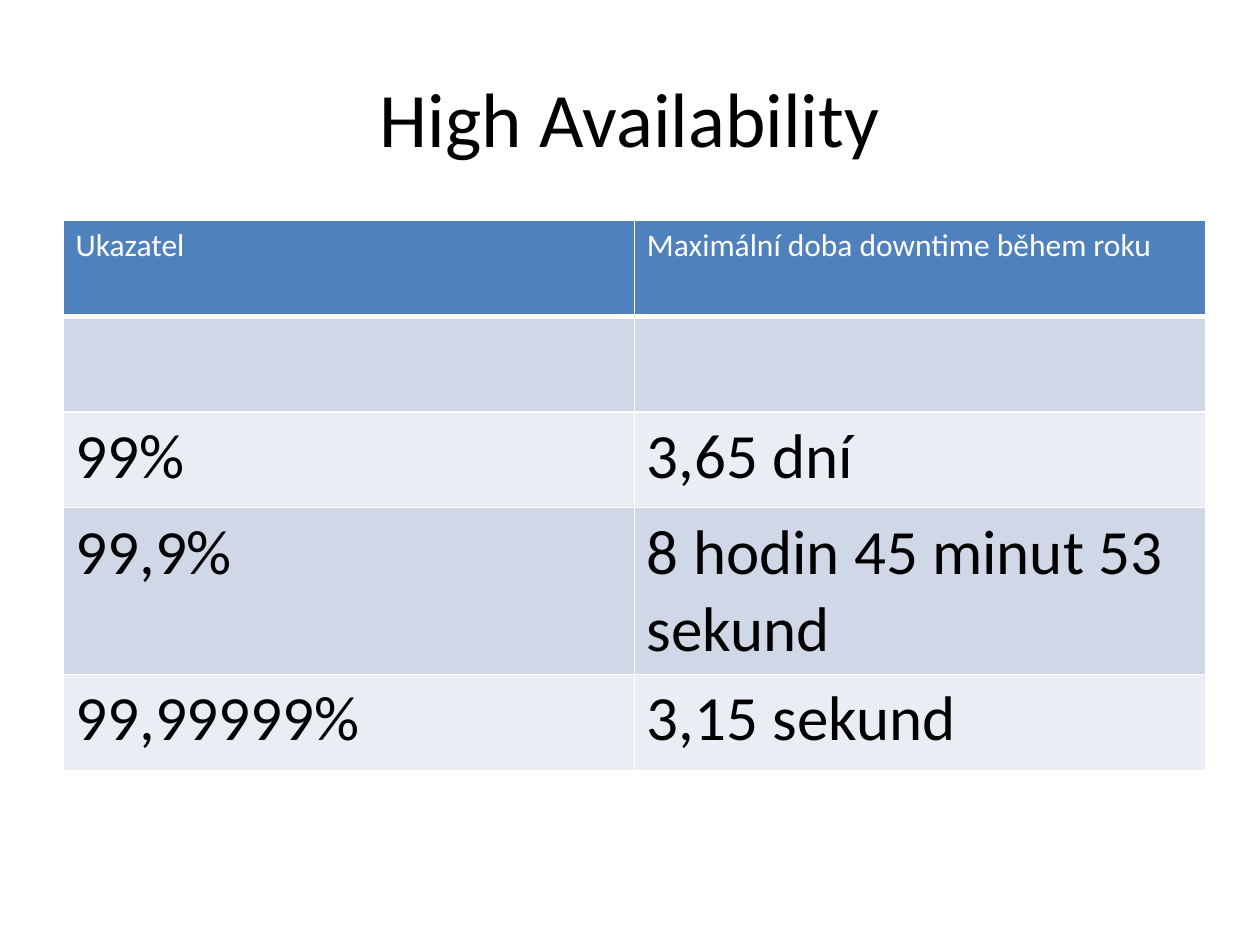
import pptx
import pptx.util
import pptx.dml.color
import pptx.enum.text
import pptx.oxml

Inches = pptx.util.Inches
HUES = {"head": "4F81BD", "dark": "D0D8E8", "light": "E9EDF4",
        "white": "FFFFFF", "black": "000000"}
ROWS = [
    ("Ukazatel", "Maximální doba downtime během roku"),
    ("", ""),
    ("99%", "3,65 dní"),
    ("99,9%", "8 hodin 45 minut 53 sekund"),
    ("99,99999%", "3,15 sekund"),
]
NS = "http://schemas.openxmlformats.org/drawingml/2006/main"


class Deck:
    def __init__(self, wide, high):
        self.file = pptx.Presentation()
        self.file.slide_width = Inches(wide)
        self.file.slide_height = Inches(high)
        self.slide = self.file.slides.add_slide(self.file.slide_layouts[5])
        self.font = "Calibri"

    def hue(self, name):
        return pptx.dml.color.RGBColor.from_string(HUES[name])

    def label(self, frame, text, size, hue):
        part = frame.paragraphs[0]
        if text:
            part.add_run().text = text
        style = {"name": self.font, "size": pptx.util.Pt(size), "bold": False}
        for font in [part.font] + [run.font for run in part.runs]:
            for key, value in style.items():
                setattr(font, key, value)
            font.color.rgb = self.hue(hue)
        return part

    def title(self, text, box):
        shape = self.slide.shapes.title
        for key, value in zip(("left", "top", "width", "height"), box):
            setattr(shape, key, Inches(value))
        frame = shape.text_frame
        frame.vertical_anchor = pptx.enum.text.MSO_ANCHOR.MIDDLE
        part = self.label(frame, text, 44, "black")
        part.alignment = pptx.enum.text.PP_ALIGN.CENTER

    def edge(self, cell, base):
        props = cell._tc.get_or_add_tcPr()
        widths = {"lnL": 1, "lnR": 1, "lnT": 1, "lnB": base}
        for spot, (side, width) in enumerate(widths.items()):
            line = pptx.oxml.parse_xml(
                f'<a:{side} xmlns:a="{NS}" w="{pptx.util.Pt(width)}"><a:solidFill>'
                f'<a:srgbClr val="{HUES["white"]}"/></a:solidFill></a:{side}>')
            props.insert(spot, line)

    def table(self, rows, left, top, width, step):
        cols = len(rows[0])
        grid = self.slide.shapes.add_table(
            len(rows), cols, Inches(left), Inches(top),
            Inches(width), Inches(step * len(rows))).table
        for col in grid.columns:
            col.width = Inches(width / cols)
        for r, row in enumerate(rows):
            fill = "head" if r == 0 else ("light", "dark")[r % 2]
            size, hue = (18, "white") if r == 0 else (36, "black")
            for c, text in enumerate(row):
                cell = grid.cell(r, c)
                cell.fill.solid()
                cell.fill.fore_color.rgb = self.hue(fill)
                self.edge(cell, 3 if r == 0 else 1)
                self.label(cell.text_frame, text, size if text else 18, hue)


def main():
    deck = Deck(10, 7.5)
    deck.title("High Availability", (0.5, 0.3, 9, 1.25))
    deck.table(ROWS, 0.5, 1.75, 9.07, 0.76)
    deck.file.save("out.pptx")


if __name__ == "__main__":
    main()
